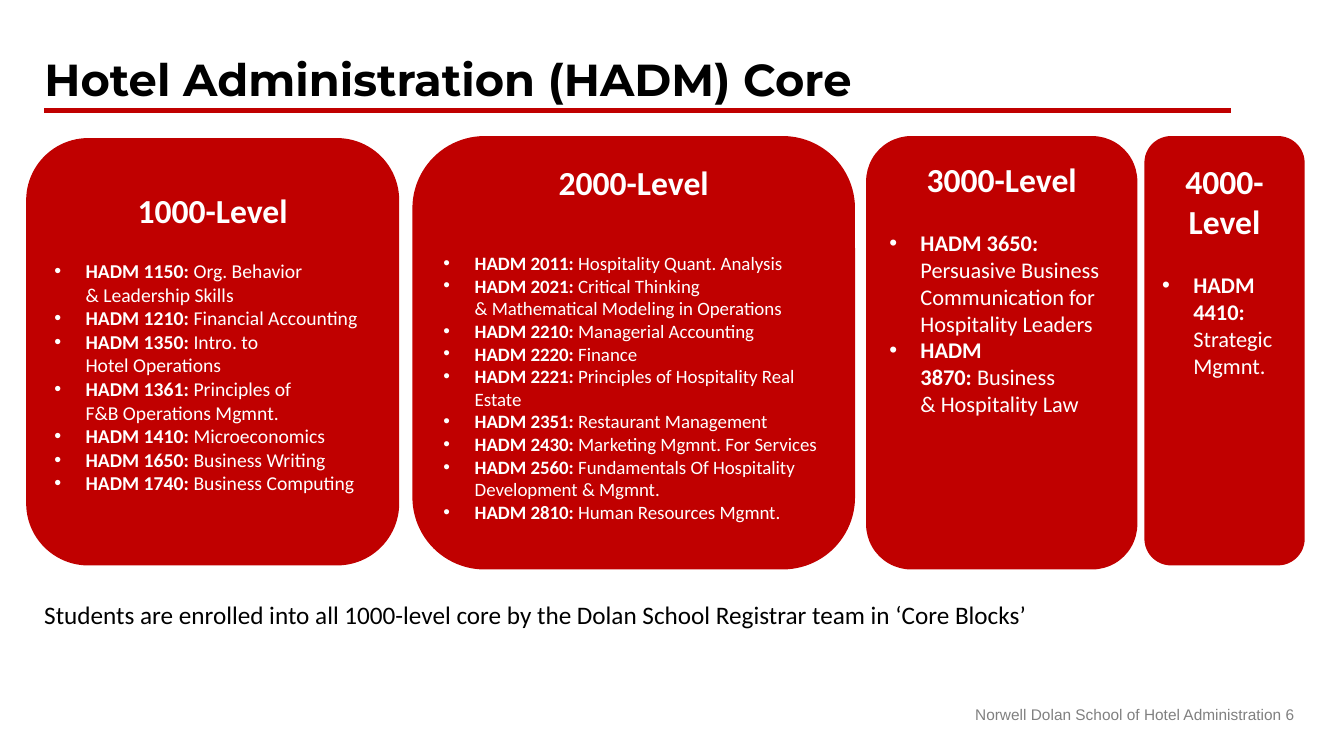
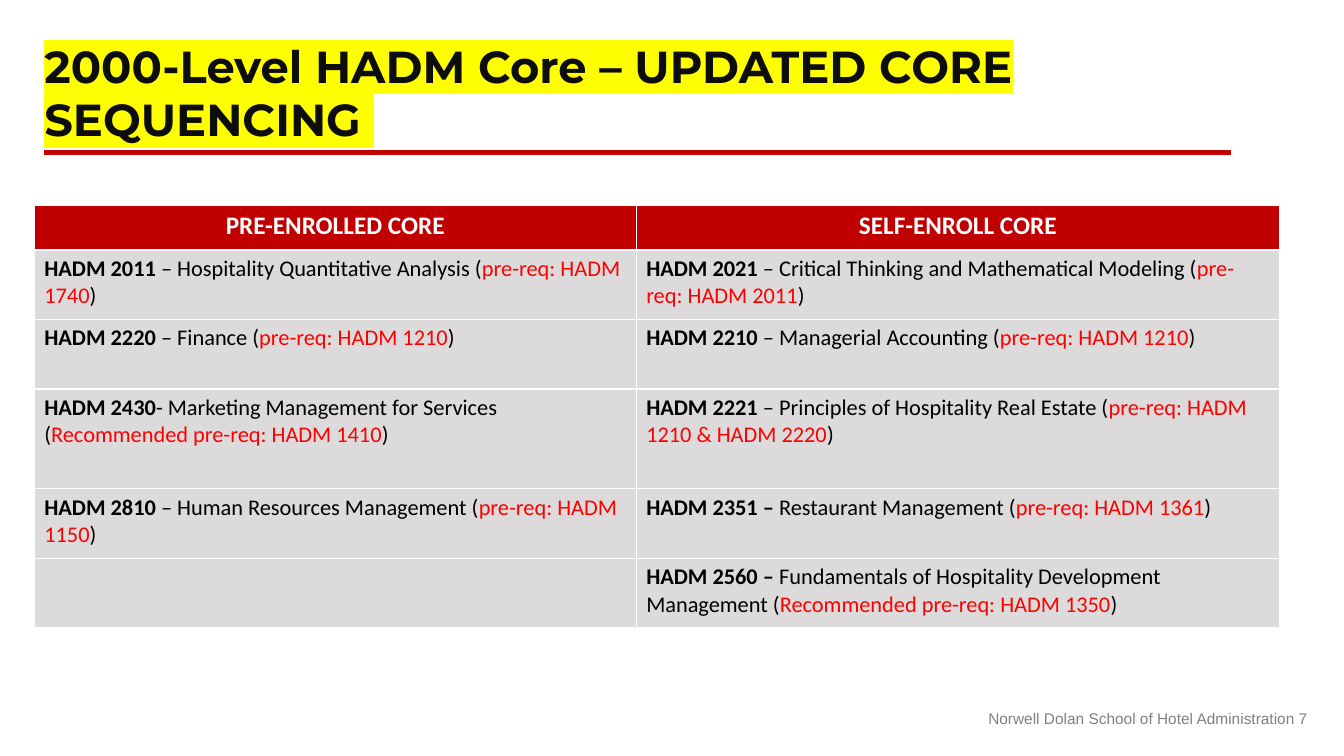
from pptx import Presentation
from pptx.dml.color import RGBColor
from pptx.enum import shapes, text
from pptx.oxml import ns, xmlchemy
from pptx.util import Inches, Pt

# Shared look
COLORS = {"red": "C00000", "alert": "FF0000", "black": "000000", "ink": "0D0D0D",
          "white": "FFFFFF", "grey": "808080", "cell": "DCDADA", "marker": "FFFF00"}
TITLE = {"size": 32, "name": "Montserrat", "bold": True}
FOOTER = {"size": 11, "name": "Arial", "color": "grey"}
NOTE = {"size": 18, "name": "Calibri", "color": "black"}
HEADING = {"size": 24, "name": "Calibri", "color": "white", "bold": True}
TABLE_HEAD = dict(HEADING, size=18)
CELL = {"size": 16, "name": "Calibri", "color": "black", "bold": False}
SCHOOL = "Norwell Dolan School of Hotel Administration"
LEFT, CENTER, RIGHT = text.PP_ALIGN.LEFT, text.PP_ALIGN.CENTER, text.PP_ALIGN.RIGHT
HANGING = Inches(0.31)

# Content; "~" stands for a space that never breaks
CARDS = [
    {"heading": "1000-Level", "at": (0.26, 1.37, 3.7, 4.24), "inset": 0.33, "gap": 21, "size": 14,
     "courses": ["1150:~Org. Behavior &~Leadership Skills", "1210: Financial Accounting",
                 "1350:~Intro. to Hotel~Operations", "1361:~Principles of F&B~Operations Mgmnt.",
                 "1410:~Microeconomics", "1650:~Business Writing", "1740: Business Computing"]},
    {"heading": "2000-Level", "at": (4.09, 1.35, 4.39, 4.3), "inset": 0.05, "gap": 35, "size": 13.5,
     "courses": ["2011: Hospitality~Quant. Analysis",
                 "2021:~Critical Thinking &~Mathematical~Modeling in Operations",
                 "2210:~Managerial Accounting", "2220:~Finance",
                 "2221:~Principles of Hospitality Real Estate", "2351:~Restaurant Management",
                 "2430:~Marketing Mgmnt. For~Services",
                 "2560:~Fundamentals Of Hospitality Development~& Mgmnt.",
                 "2810: Human Resources Mgmnt."]},
    {"heading": "3000-Level", "at": (8.59, 1.35, 2.69, 4.3), "inset": 0.1, "gap": 21, "size": 16,
     "courses": ["3650: Persuasive Business Communication for Hospitality Leaders",
                 "3870:~Business &~Hospitality Law"]},
    {"heading": "4000-Level", "at": (11.35, 1.35, 1.59, 4.26), "inset": 0.17, "gap": 21, "size": 16,
     "courses": ["4410: Strategic Mgmnt."]},
]
ENROLLMENT = ("Students are enrolled into all 1000-level core by the Dolan School "
              "Registrar team in ‘Core Blocks’")

COLUMNS = [("PRE-ENROLLED CORE", 5.97), ("SELF-ENROLL CORE", 6.38)]
HEAD_HEIGHT = 0.44
# Row height, then code, name and prerequisite for each column
SEQUENCE = [
    (0.69, ("HADM 2011 ", "– Hospitality Quantitative Analysis", "pre-req: HADM 1740"),
     ("HADM 2021", " – Critical Thinking and Mathematical Modeling", "pre-req: HADM 2011")),
    (0.69, ("HADM 2220", " – Finance", "pre-req: HADM 1210"),
     ("HADM 2210", " – Managerial Accounting", "pre-req: HADM 1210")),
    (0.99, ("HADM 2430", "- Marketing Management for Services", "Recommended pre-req: HADM 1410"),
     ("HADM 2221", " – Principles of Hospitality Real Estate", "pre-req: HADM 1210 & HADM 2220")),
    (0.69, ("HADM 2810", " – Human Resources Management", "pre-req: HADM 1150"),
     ("HADM 2351 – ", "Restaurant Management", "pre-req: HADM 1361")),
    (0.69, None,
     ("HADM 2560 – ", "Fundamentals of Hospitality Development Management",
      "Recommended pre-req: HADM 1350")),
]


def color(name):
    return RGBColor.from_string(COLORS[name])


def inches(values):
    return [Inches(value) for value in values]


def add_span(para, words, style):
    span = para.add_run()
    span.text = words.replace("~", chr(160))
    for key, value in style.items():
        if key == "color":
            span.font.color.rgb = color(value)
        else:
            setattr(span.font, key, Pt(value) if key == "size" else value)
    return span


def add_child(parent, tag, **attributes):
    child = xmlchemy.OxmlElement(tag)
    for key, value in attributes.items():
        child.set(key, value)
    parent.append(child)
    return child


def add_bullet(para):
    props = para._p.get_or_add_pPr()
    props.set("marL", str(HANGING))
    props.set("indent", str(-HANGING))
    add_child(props, "a:buFont", typeface="Arial")
    add_child(props, "a:buChar", char="•")


def highlight(span, name):
    mark = xmlchemy.OxmlElement("a:highlight")
    add_child(mark, "a:srgbClr", val=COLORS[name])
    span.font._element.find(ns.qn("a:latin")).addprevious(mark)


def add_label(page, words, at, style, align=LEFT):
    frame = page.shapes.add_textbox(*inches(at)).text_frame
    frame.word_wrap = True
    para = frame.paragraphs[0]
    para.alignment = align
    add_span(para, words, style)


def add_page(deck, title, top, height, ink, footer_at, number):
    """Slide with title, red rule under it and footer."""
    page = deck.slides.add_slide(deck.slide_layouts[5])
    box = page.shapes.title
    box.left, box.top, box.width, box.height = inches((0.34, top, 11, height))
    frame = box.text_frame
    frame.auto_size = text.MSO_AUTO_SIZE.NONE
    frame.vertical_anchor = text.MSO_ANCHOR.TOP
    para = frame.paragraphs[0]
    para.alignment = LEFT
    span = add_span(para, title, dict(TITLE, color=ink))

    rule_y = top + height
    rule = page.shapes.add_connector(shapes.MSO_CONNECTOR.STRAIGHT,
                                     *inches((0.44, rule_y, 12.21, rule_y)))
    rule.line.color.rgb = color("red")
    rule.line.width = Pt(3.5)
    add_child(rule._element.spPr, "a:effectLst")
    add_label(page, f"{SCHOOL} {number}", (*footer_at, 8.52, 0.4), FOOTER, RIGHT)
    return page, span


def add_card(page, card):
    box = page.shapes.add_shape(shapes.MSO_SHAPE.ROUNDED_RECTANGLE, *inches(card["at"]))
    box.shadow.inherit = False
    box.fill.solid()
    box.fill.fore_color.rgb = color("red")
    box.line.fill.background()
    frame = box.text_frame
    frame.word_wrap = True
    frame.vertical_anchor = text.MSO_ANCHOR.TOP
    frame.margin_top = Inches(card["inset"])
    para = frame.paragraphs[0]
    para.alignment = CENTER
    para.space_after = Pt(card["gap"])
    add_span(para, card["heading"], HEADING)
    style = dict(HEADING, size=card["size"])
    for course in card["courses"]:
        number, colon, name = course.partition(":")
        para = frame.add_paragraph()
        para.alignment = LEFT
        add_bullet(para)
        add_span(para, f"HADM {number}{colon}", style)
        add_span(para, name, dict(style, bold=False))


def add_sequence(page):
    heights = [HEAD_HEIGHT] + [row[0] for row in SEQUENCE]
    widths = [width for _, width in COLUMNS]
    grid = page.shapes.add_table(len(heights), len(widths),
                                 *inches((0.34, 2.04, sum(widths), sum(heights)))).table
    for row, height in zip(grid.rows, heights):
        row.height = Inches(height)
    for x, (label, width) in enumerate(COLUMNS):
        grid.columns[x].width = Inches(width)
        para = grid.cell(0, x).text_frame.paragraphs[0]
        para.alignment = CENTER
        add_span(para, label, TABLE_HEAD)
        for y, row in enumerate(SEQUENCE, 1):
            if row[x + 1]:
                code, name, need = row[x + 1]
                para = grid.cell(y, x).text_frame.paragraphs[0]
                add_span(para, code, dict(CELL, bold=True))
                add_span(para, f"{name} (", CELL)
                add_span(para, need, dict(CELL, color="alert"))
                add_span(para, ")", CELL)
        for y in range(len(heights)):
            fill = grid.cell(y, x).fill
            fill.solid()
            fill.fore_color.rgb = color("cell" if y else "red")


def main():
    deck = Presentation()
    deck.slide_width, deck.slide_height = inches((13.33, 7.5))

    # Core courses by level
    page, _ = add_page(deck, "Hotel Administration (HADM) Core", 0.46, 0.64, "black",
                       (4.42, 6.95), 6)
    for card in CARDS:
        add_card(page, card)
    add_label(page, ENROLLMENT, (0.34, 5.9, 12.31, 0.4), NOTE)

    # Sequence of the 2000-level core
    page, span = add_page(deck, "2000-Level HADM Core – UPDATED CORE SEQUENCING ", 0.33, 1.18,
                          "ink", (4.55, 6.99), 7)
    highlight(span, "marker")
    add_sequence(page)

    deck.save("out.pptx")


if __name__ == "__main__":
    main()
